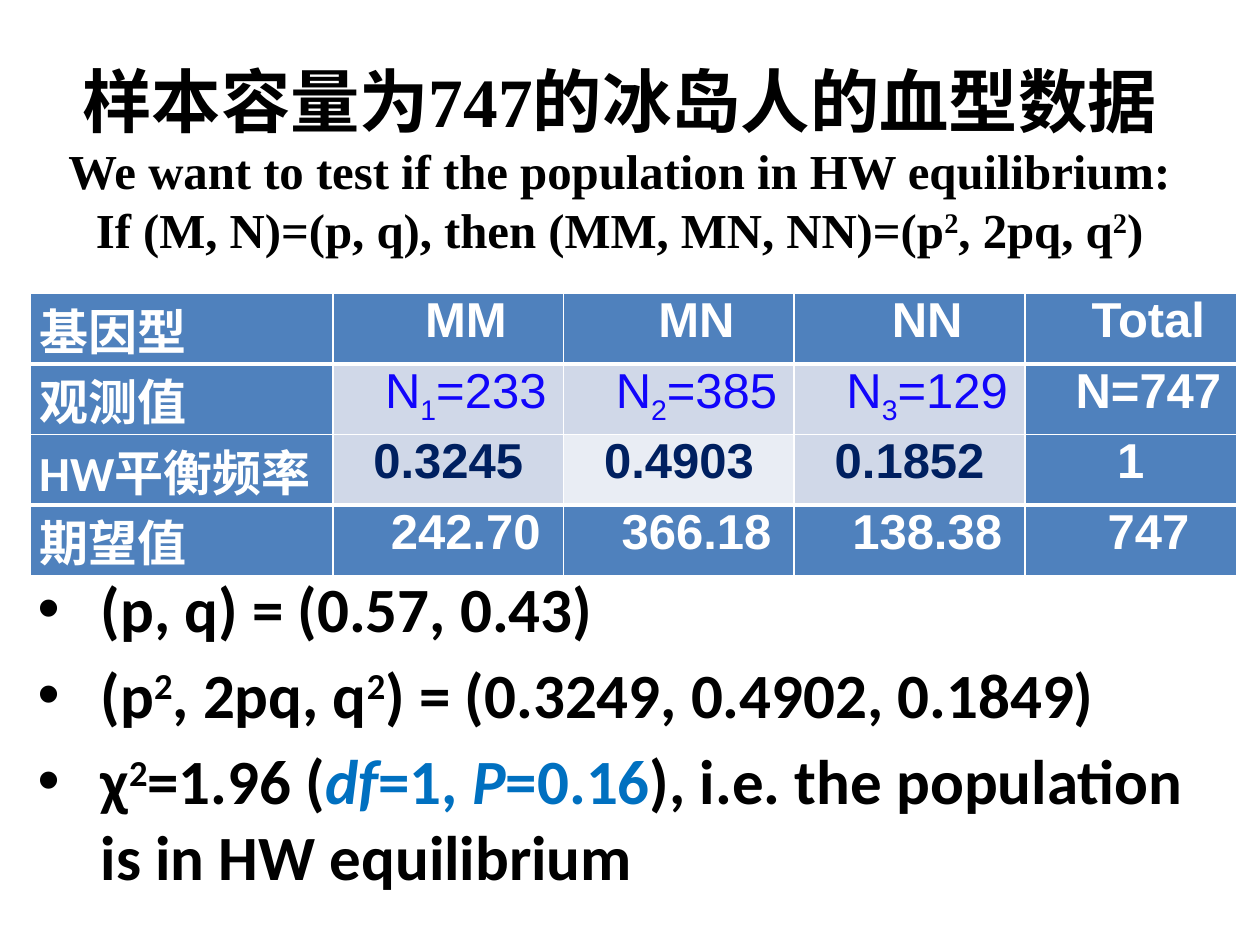
from dataclasses import dataclass, field

from lxml.etree import SubElement
from pptx import Presentation
from pptx.dml.color import RGBColor
from pptx.enum.text import MSO_ANCHOR as Anchor, PP_ALIGN as Align
from pptx.oxml import parse_xml
from pptx.oxml.ns import nsdecls, qn
from pptx.util import Cm, Pt

BLACK = RGBColor(0x00, 0x00, 0x00)
WHITE = RGBColor(0xFF, 0xFF, 0xFF)
HEADER_BLUE = RGBColor(0x4F, 0x81, 0xBD)
BAND_DARK = RGBColor(0xD0, 0xD8, 0xE8)
BAND_LIGHT = RGBColor(0xE9, 0xED, 0xF4)
COUNT_BLUE = RGBColor(0x11, 0x05, 0xFB)
NAVY = RGBColor(0x00, 0x20, 0x60)
RESULT_BLUE = RGBColor(0x00, 0x70, 0xC0)

SUPER, SUB = 30, -25
HEADING = {"name": "Times New Roman", "size": Pt(39.6), "bold": True, "color": BLACK}
SUBHEADING = HEADING | {"size": Pt(27.9)}
BULLET = {"name": "Calibri", "size": Pt(36), "bold": True, "color": BLACK}
LABEL = {"name": "Calibri", "size": Pt(28), "bold": True, "color": WHITE}
VALUE = LABEL | {"name": "Arial"}
COUNT = VALUE | {"bold": False, "color": COUNT_BLUE}
FREQUENCY = VALUE | {"color": NAVY}
RESULT = {"color": RESULT_BLUE}
SYMBOL = RESULT | {"italic": True}


@dataclass
class Span:
    text: str
    look: dict = field(default_factory=dict)
    baseline: int = 0


@dataclass
class Entry:
    spans: list[Span]
    look: dict
    fill: RGBColor = HEADER_BLUE
    align: Align = Align.CENTER
    indent: float = 0.71


@dataclass
class Frame:
    left: float
    top: float
    width: float
    height: float

    def lengths(self) -> list:
        return [Cm(value) for value in (self.left, self.top, self.width, self.height)]


def write_spans(para, spans: list[Span], look: dict) -> None:
    for span in spans:
        run = para.add_run()
        run.text = span.text
        for name, value in (look | span.look).items():
            if name == "color":
                run.font.color.rgb = value
            else:
                setattr(run.font, name, value)
        if span.baseline:
            run._r.get_or_add_rPr().set("baseline", str(span.baseline * 1000))


def add_text_box(page, frame: Frame):
    body = page.shapes.add_textbox(*frame.lengths()).text_frame
    body.word_wrap = True
    body.vertical_anchor = Anchor.MIDDLE
    return body


def set_borders(cell, widths: dict[str, float]) -> None:
    props = cell._tc.get_or_add_tcPr()
    for place, (side, width) in enumerate(widths.items()):
        props.insert(place, parse_xml(
            f'<a:{side} {nsdecls("a")} w="{Pt(width)}"><a:solidFill>'
            f'<a:srgbClr val="{WHITE}"/></a:solidFill></a:{side}>'))


def fill_cell(cell, entry: Entry, thick_top: bool, thick_bottom: bool) -> None:
    margins = {"margin_left": Cm(0.18), "margin_right": Cm(0.18),
               "margin_top": 0, "margin_bottom": 0}
    for name, value in margins.items():
        setattr(cell, name, value)
    cell.fill.solid()
    cell.fill.fore_color.rgb = entry.fill
    set_borders(cell, {"lnL": 1, "lnR": 1, "lnT": 3 if thick_top else 1,
                       "lnB": 3 if thick_bottom else 1})
    para = cell.text_frame.paragraphs[0]
    para.alignment = entry.align
    para._p.get_or_add_pPr().set("indent", str(Cm(entry.indent)))
    write_spans(para, entry.spans, entry.look)


def label(text: str) -> Entry:
    return Entry([Span(text)], LABEL, align=Align.LEFT, indent=0)


def value(text: str, **options) -> Entry:
    return Entry([Span(text)], **({"look": VALUE} | options))


def count(index: int, number: int) -> Entry:
    spans = [Span("N"), Span(str(index), baseline=SUB), Span(f"={number}")]
    return Entry(spans, COUNT, BAND_DARK)


def frequency(text: str, fill: RGBColor) -> Entry:
    return value(text, look=FREQUENCY, fill=fill, indent=0)


def add_title(page, frame: Frame) -> None:
    para = add_text_box(page, frame).paragraphs[0]
    para.alignment = Align.CENTER
    write_spans(para, [Span("样本容量为747的冰岛人的血型数据")], HEADING)
    para.add_line_break()
    write_spans(para, [
        Span("We want to test if the population in HW equilibrium: "
             "If (M, N)=(p, q), then (MM, MN, NN)=(p"),
        Span("2", baseline=SUPER), Span(", 2pq, q"),
        Span("2", baseline=SUPER), Span(")")], SUBHEADING)


def add_genotype_table(page, frame: Frame, widths: list[float], rows: list) -> None:
    table = page.shapes.add_table(len(rows), len(widths), *frame.lengths()).table
    for column, width in zip(table.columns, widths):
        column.width = Cm(width)
    ruled_below = {0, 2}
    for row, entries in enumerate(rows):
        for column, entry in enumerate(entries):
            fill_cell(table.cell(row, column), entry,
                      row - 1 in ruled_below, row in ruled_below)


def add_bullets(page, frame: Frame, items: list[list[Span]]) -> None:
    body = add_text_box(page, frame)
    for number, spans in enumerate(items):
        para = body.add_paragraph() if number else body.paragraphs[0]
        para.space_before = Pt(6)
        props = para._p.get_or_add_pPr()
        for name, length in {"marL": Cm(1.27), "indent": Cm(-1.27)}.items():
            props.set(name, str(length))
        SubElement(props, qn("a:buFont"), typeface="Arial")
        SubElement(props, qn("a:buChar"), char="•")
        write_spans(para, spans, BULLET)


def main() -> None:
    deck = Presentation()
    deck.slide_width, deck.slide_height = Cm(25.4), Cm(19.05)
    page = deck.slides.add_slide(deck.slide_layouts[6])

    add_title(page, Frame(0.69, 0.76, 23.6, 4.85))
    add_genotype_table(page, Frame(0.61, 5.92, 24.32, 5.68), [6.1, 4.65, 4.65, 4.65, 4.27], [
        [label("基因型"), *map(value, ["MM", "MN", "NN", "Total"])],
        [label("观测值"), count(1, 233), count(2, 385), count(3, 129), value("N=747")],
        [label("HW平衡频率"), frequency("0.3245", BAND_DARK),
         frequency("0.4903", BAND_LIGHT), frequency("0.1852", BAND_DARK),
         value("1", indent=0)],
        [label("期望值"), *map(value, ["242.70", "366.18", "138.38", "747"])],
    ])
    add_bullets(page, Frame(0.51, 11.33, 24.21, 6.83), [
        [Span("(p, q) = (0.57, 0.43)")],
        [Span("(p"), Span("2", baseline=SUPER), Span(", 2pq, q"),
         Span("2", baseline=SUPER), Span(") = (0.3249, 0.4902, 0.1849)")],
        [Span("χ"), Span("2", baseline=SUPER), Span("=1.96 ("),
         Span("df", SYMBOL), Span("=1, ", RESULT), Span("P", SYMBOL),
         Span("=0.16", RESULT), Span("), i.e. the population is in HW equilibrium")],
    ])
    deck.save("out.pptx")


if __name__ == "__main__":
    main()
